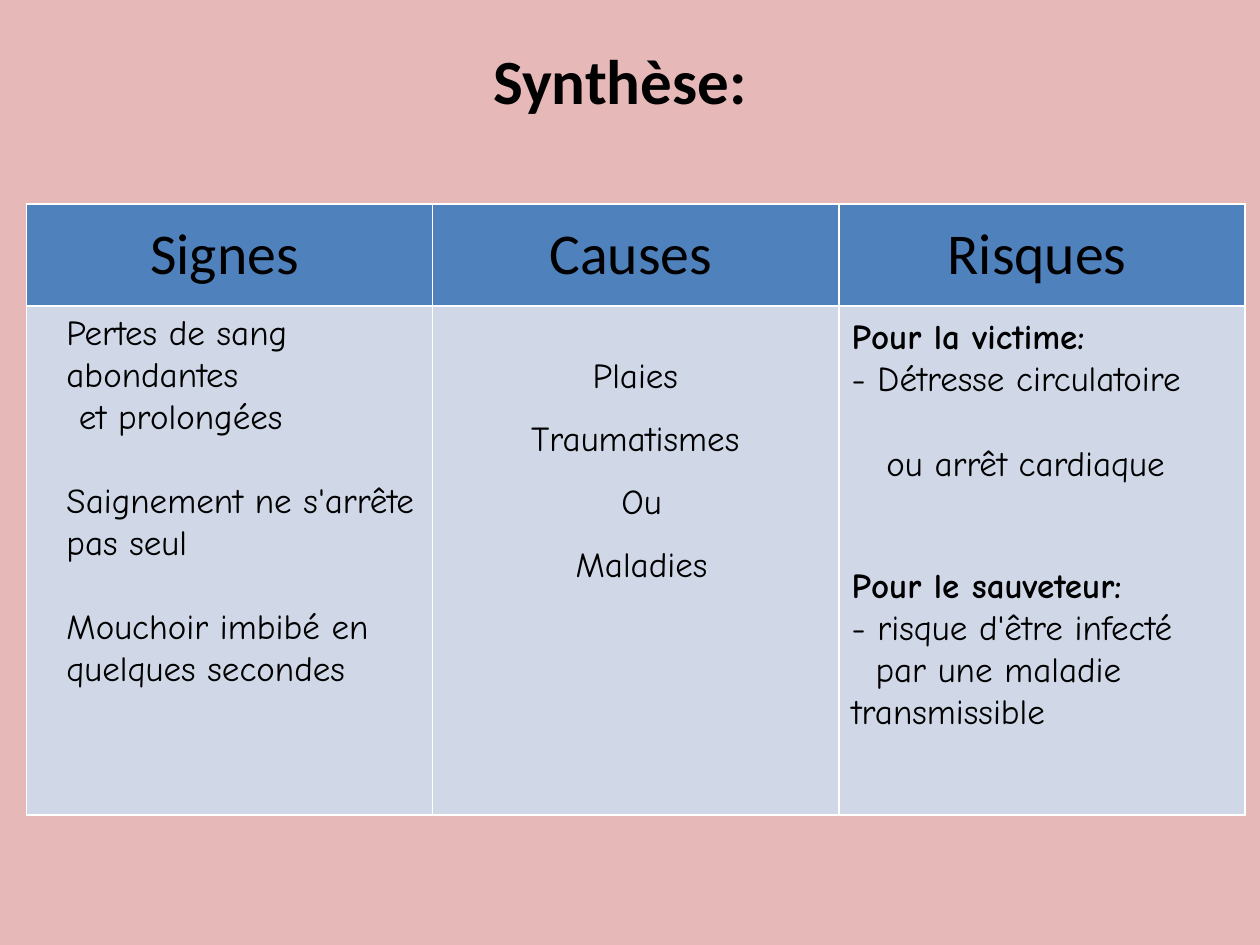
from dataclasses import dataclass

import pptx
import pptx.dml.color
import pptx.enum.text
import pptx.oxml
import pptx.oxml.ns
import pptx.util
from pptx.util import Cm

COLORS = {
    "background": "E6B9B8",
    "header": "4F81BD",
    "body": "D0D8E8",
    "border": "FFFFFF",
    "text": "000000",
}
TITLE_FONT, BODY_FONT = "Calibri", "Comic Neue"
CENTER = pptx.enum.text.PP_ALIGN.CENTER
LEFT = pptx.enum.text.PP_ALIGN.LEFT
HEADINGS = ("Signes", "Causes", "Risques")
COLUMN_WIDTH = Cm(8.19)
ROW_HEIGHTS = (Cm(2.06), Cm(10.26))


@dataclass
class Line:
    text: str
    bold: bool = False
    indent: float = 0  # first line, in cm
    space_before: float = 0  # in points


@dataclass
class Note:
    left: float
    top: float
    width: float
    height: float
    lines: list[Line]
    alignment: pptx.enum.text.PP_ALIGN = LEFT
    line_spacing: float = 1.0


NOTES = [
    Note(1.09, 6.15, 8.15, 9.17, [
        Line("Pertes de sang abondantes"),
        Line("et prolongées", indent=0.25),
        Line("Saignement ne s'arrête pas seul", space_before=24),
        Line("Mouchoir imbibé en quelques secondes", space_before=24),
    ]),
    Note(10.26, 6.6, 5.1, 6.2, [
        Line("Plaies"),
        Line("Traumatismes"),
        Line("Ou", indent=0.25),
        Line("Maladies", indent=0.25),
    ], CENTER, 1.5),
    Note(16.92, 6.25, 8.08, 3.2, [
        Line("Pour la victime:", bold=True),
        Line("- Détresse circulatoire"),
        Line("ou arrêt cardiaque", indent=0.7, space_before=24),
    ]),
    Note(16.92, 11.25, 8.08, 4.19, [
        Line("Pour le sauveteur:", bold=True),
        Line("- risque d'être infecté"),
        Line("par une maladie transmissible", indent=0.48),
    ]),
]


def color(name: str) -> pptx.dml.color.RGBColor:
    return pptx.dml.color.RGBColor.from_string(COLORS[name])


def format_runs(paragraph, font: str, size: float, bold: bool = False) -> None:
    for run in paragraph.runs:
        run.font.name = font
        run.font.size = pptx.util.Pt(size)
        run.font.bold = bold
        run.font.color.rgb = color("text")


def style_cell(cell, fill: str) -> None:
    """Draw the cell's borders, then its fill."""
    properties = cell._tc.get_or_add_tcPr()
    namespace = pptx.oxml.ns.nsdecls("a")
    for side in ("lnL", "lnR", "lnT", "lnB"):
        properties.append(pptx.oxml.parse_xml(
            f'<a:{side} {namespace} w="12700"><a:solidFill>'
            f'<a:srgbClr val="{COLORS["border"]}"/></a:solidFill></a:{side}>'
        ))
    cell.fill.solid()
    cell.fill.fore_color.rgb = color(fill)


def add_title(slide) -> None:
    title = slide.shapes.title
    title.left, title.top, title.width, title.height = Cm(1.07), Cm(0.71), Cm(22.86), Cm(1.78)
    title.text_frame.text = "Synthèse:"
    title.text_frame.vertical_anchor = pptx.enum.text.MSO_ANCHOR.TOP
    title.text_frame.auto_size = pptx.enum.text.MSO_AUTO_SIZE.NONE
    paragraph = title.text_frame.paragraphs[0]
    paragraph.alignment = CENTER
    format_runs(paragraph, TITLE_FONT, 36, bold=True)


def add_summary_table(slide) -> None:
    table = slide.shapes.add_table(
        len(ROW_HEIGHTS), len(HEADINGS), Cm(0.53), Cm(4.11),
        COLUMN_WIDTH * len(HEADINGS), sum(ROW_HEIGHTS),
    ).table
    for row, height in zip(table.rows, ROW_HEIGHTS):
        row.height = height
    for index, heading in enumerate(HEADINGS):
        table.columns[index].width = COLUMN_WIDTH
        header = table.cell(0, index)
        header.text_frame.text = heading
        header.vertical_anchor = pptx.enum.text.MSO_ANCHOR.MIDDLE
        header.margin_right = Cm(0.45)
        paragraph = header.text_frame.paragraphs[0]
        paragraph.alignment = CENTER
        format_runs(paragraph, TITLE_FONT, 33)
        style_cell(header, "header")
        style_cell(table.cell(1, index), "body")


def add_note(slide, note: Note) -> None:
    box = slide.shapes.add_textbox(
        Cm(note.left), Cm(note.top), Cm(note.width), Cm(note.height)
    )
    frame = box.text_frame
    frame.word_wrap = True
    frame.margin_top = frame.margin_bottom = Cm(0.1)
    frame.text = "\n".join(line.text for line in note.lines)
    for paragraph, line in zip(frame.paragraphs, note.lines):
        paragraph.alignment = note.alignment
        paragraph.line_spacing = note.line_spacing
        paragraph.space_before = pptx.util.Pt(line.space_before)
        if line.indent:
            paragraph._p.get_or_add_pPr().set("indent", str(Cm(line.indent)))
        format_runs(paragraph, BODY_FONT, 20, line.bold)


def main() -> None:
    presentation = pptx.Presentation()
    presentation.slide_width, presentation.slide_height = Cm(25.4), Cm(19.05)
    slide = presentation.slides.add_slide(presentation.slide_layouts.get_by_name("Title Only"))
    slide.background.fill.solid()
    slide.background.fill.fore_color.rgb = color("background")
    add_title(slide)
    add_summary_table(slide)
    for note in NOTES:
        add_note(slide, note)
    presentation.save("out.pptx")


if __name__ == "__main__":
    main()
